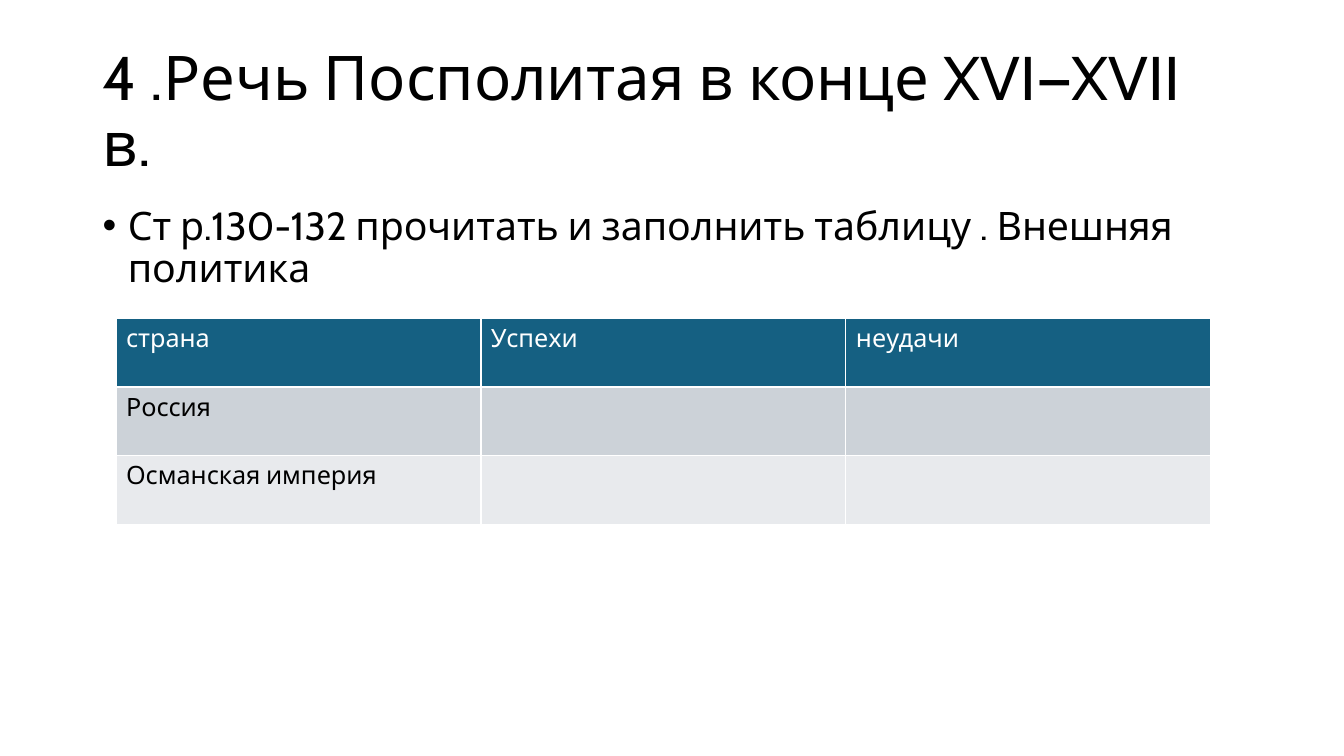
from dataclasses import dataclass

from lxml import etree
from pptx import Presentation
from pptx.dml.color import RGBColor
from pptx.enum import text
from pptx.oxml import ns
from pptx.slide import Slide
from pptx.table import _Cell
from pptx.text.text import _Paragraph
from pptx.util import Inches, Pt


@dataclass(frozen=True)
class Theme:
    font: str = "Cabin"
    ink: str = "000000"
    white: str = "FFFFFF"
    header: str = "156082"
    bands: tuple[str, str] = ("CCD2D8", "E8EAED")
    title_size: int = 44
    body_size: int = 28
    table_size: int = 18
    border_width: int = 1


@dataclass(frozen=True)
class TextBlock:
    content: str
    top: float
    height: float
    size: int
    anchor: text.MSO_ANCHOR
    bullet: bool = False


THEME = Theme()
TEXT_LEFT, TEXT_WIDTH = 0.92, 11.5
TABLE_LEFT, TABLE_TOP = 1.15, 3.16
COLUMN_WIDTH, ROW_HEIGHT = 3.62, 0.68

TEXT_BLOCKS = [
    TextBlock("4 .Речь Посполитая в конце XVI—XVII в.", 0.4, 1.45,
              THEME.title_size, text.MSO_ANCHOR.MIDDLE),
    TextBlock("Ст р.130-132 прочитать и заполнить таблицу . Внешняя политика",
              2, 4.76, THEME.body_size, text.MSO_ANCHOR.TOP, bullet=True),
]
POLICY_ROWS = [
    ("страна", "Успехи", "неудачи"),
    ("Россия", "", ""),
    ("Османская империя", "", ""),
]


def style_runs(paragraph: _Paragraph, size: int, color: str) -> None:
    for run in paragraph.runs:
        run.font.name = THEME.font
        run.font.size = Pt(size)
        run.font.bold = False
        run.font.color.rgb = RGBColor.from_string(color)


def add_bullet(paragraph: _Paragraph) -> None:
    properties = paragraph._p.get_or_add_pPr()
    properties.set("marL", str(Inches(0.25)))
    properties.set("indent", str(Inches(-0.25)))
    etree.SubElement(properties, ns.qn("a:buFont"), typeface="Arial")
    etree.SubElement(properties, ns.qn("a:buChar"), char="•")


def add_text_block(slide: Slide, block: TextBlock) -> None:
    shape = slide.shapes.add_textbox(Inches(TEXT_LEFT), Inches(block.top),
                                     Inches(TEXT_WIDTH), Inches(block.height))
    frame = shape.text_frame
    frame.word_wrap = True
    frame.vertical_anchor = block.anchor
    frame.text = block.content
    paragraph = frame.paragraphs[0]
    if block.bullet:
        add_bullet(paragraph)
    paragraph.line_spacing = 0.9
    style_runs(paragraph, block.size, THEME.ink)


def add_borders(cell: _Cell) -> None:
    properties = cell._tc.get_or_add_tcPr()
    for side in ("lnL", "lnR", "lnT", "lnB"):
        line = etree.SubElement(properties, ns.qn(f"a:{side}"),
                                w=str(Pt(THEME.border_width)))
        fill = etree.SubElement(line, ns.qn("a:solidFill"))
        etree.SubElement(fill, ns.qn("a:srgbClr"), val=THEME.white)


def fill_cell(cell: _Cell, content: str, background: str, color: str) -> None:
    add_borders(cell)
    cell.fill.solid()
    cell.fill.fore_color.rgb = RGBColor.from_string(background)
    cell.text_frame.text = content
    style_runs(cell.text_frame.paragraphs[0], THEME.table_size, color)


def add_policy_table(slide: Slide) -> None:
    row_count, column_count = len(POLICY_ROWS), len(POLICY_ROWS[0])
    table = slide.shapes.add_table(
        row_count, column_count, Inches(TABLE_LEFT), Inches(TABLE_TOP),
        Inches(COLUMN_WIDTH * column_count), Inches(ROW_HEIGHT * row_count),
    ).table
    backgrounds = (THEME.header, *THEME.bands)
    for row_index, (contents, background) in enumerate(zip(POLICY_ROWS, backgrounds)):
        color = THEME.white if row_index == 0 else THEME.ink
        for column_index, content in enumerate(contents):
            fill_cell(table.cell(row_index, column_index), content, background, color)


def main() -> None:
    presentation = Presentation()
    presentation.slide_width = Inches(13.33)
    presentation.slide_height = Inches(7.5)
    slide = presentation.slides.add_slide(presentation.slide_layouts[6])
    for block in TEXT_BLOCKS:
        add_text_block(slide, block)
    add_policy_table(slide)
    presentation.save("out.pptx")


if __name__ == "__main__":
    main()
